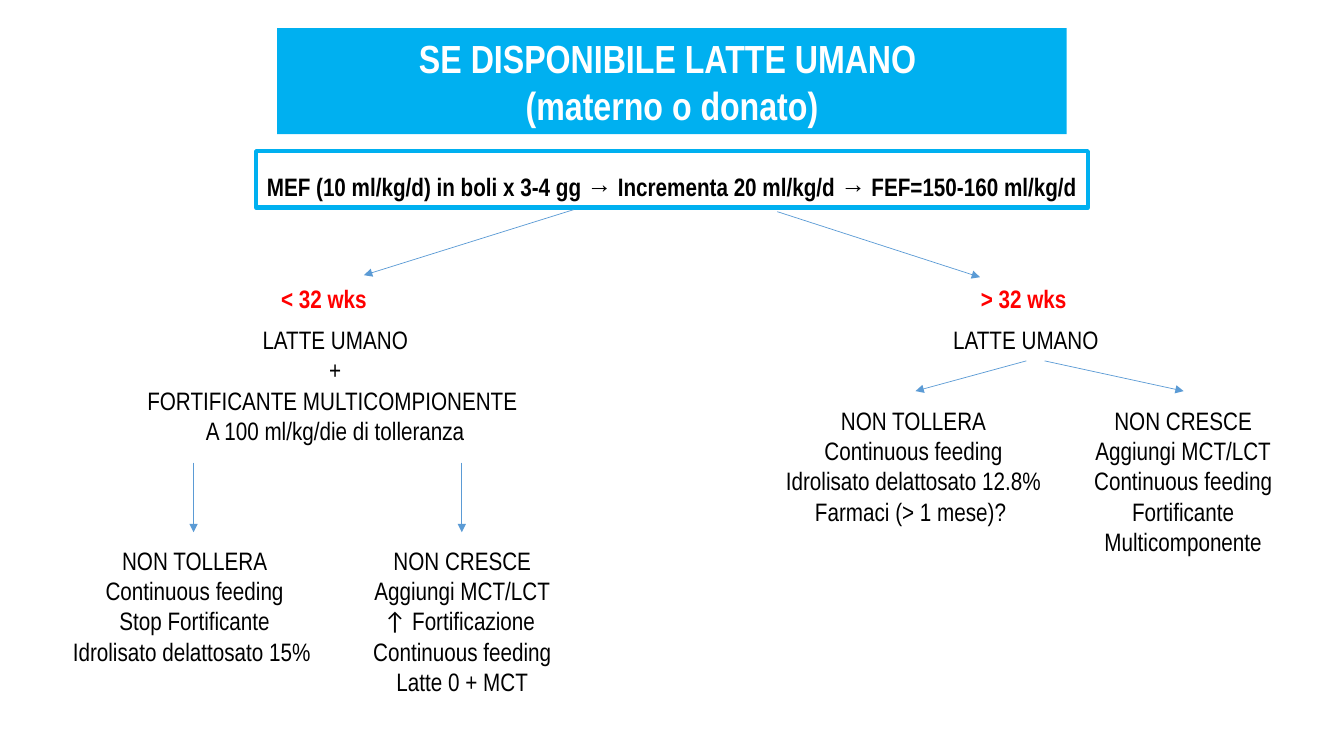
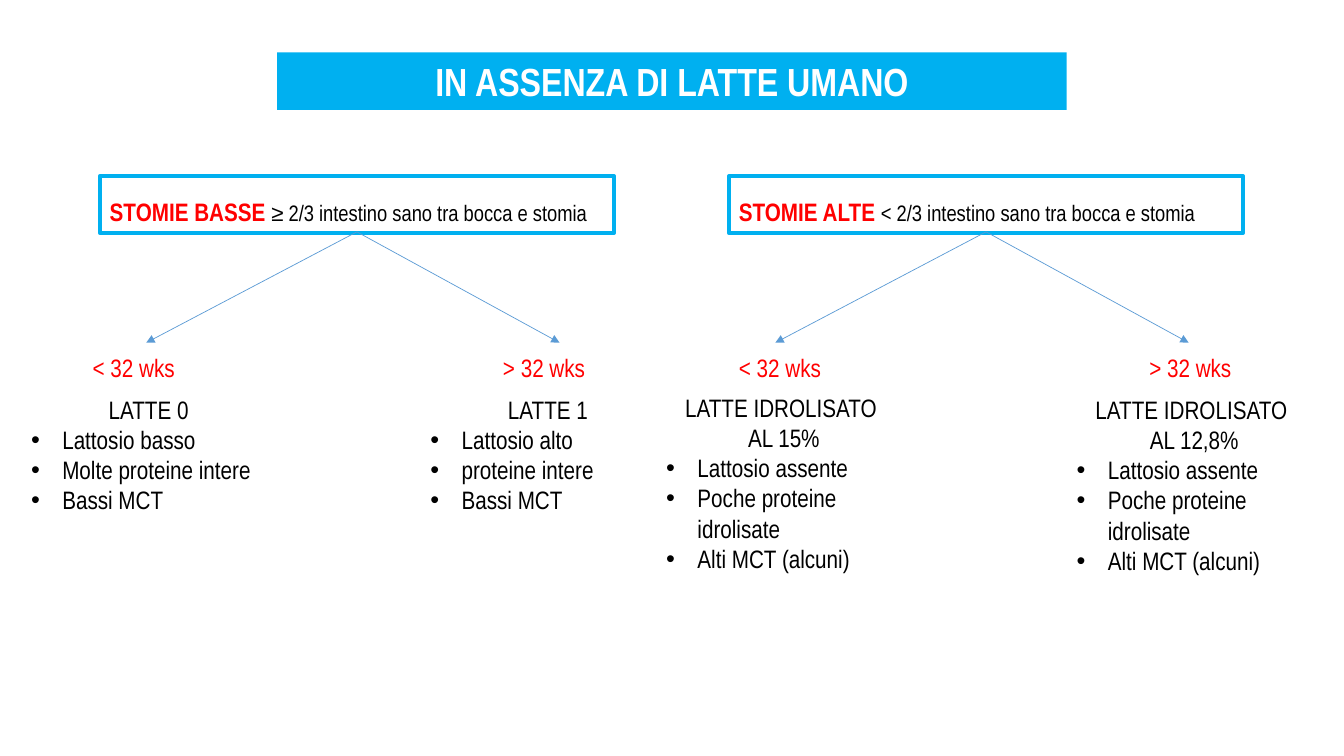
from lxml import etree
from pptx import Presentation
from pptx.dml.color import RGBColor
from pptx.enum.shapes import MSO_CONNECTOR, MSO_SHAPE
from pptx.enum.text import MSO_ANCHOR, PP_ALIGN
from pptx.oxml.ns import qn
from pptx.util import Pt

PX = 9144
RECT, LINE = MSO_SHAPE.RECTANGLE, MSO_CONNECTOR.STRAIGHT
TOP, MID = MSO_ANCHOR.TOP, MSO_ANCHOR.MIDDLE
LEFT, MIDDLE = PP_ALIGN.LEFT, PP_ALIGN.CENTER
FONT, SIGN = "Arial Narrow", "Calibri"
SKY, WIRE, RED = "00B0F0", "5B9BD5", "FF0000"
BLACK, WHITE = "000000", "FFFFFF"
HANG = 31


def px(*nums):
    """Turn px lengths into EMU."""
    return [num * PX for num in nums]


def color(code):
    """Turn a hex string into a colour."""
    return RGBColor.from_string(code)


def run(text, tint=BLACK, size=18, bold=False, face=FONT):
    """Describe one run of text."""
    return text, tint, size, bold, face


def para(frame, runs, align=MIDDLE, space=None, bullet=False):
    """Add a paragraph, reusing the first one while it is empty."""
    first = frame.paragraphs[0]
    item = frame.add_paragraph() if first.runs else first
    if bullet:
        props = item._p.get_or_add_pPr()
        props.set("marL", str(HANG * PX))
        props.set("indent", str(-HANG * PX))
        etree.SubElement(props, qn("a:buFont")).set("typeface", "Arial")
        etree.SubElement(props, qn("a:buChar")).set("char", "•")
    item.alignment = align
    if space:
        item.line_spacing = space
    for text, tint, size, bold, face in runs:
        part = item.add_run()
        part.text = text
        part.font.name = face
        part.font.size = Pt(size)
        part.font.bold = bold
        part.font.color.rgb = color(tint)


def area(slide, box):
    """Add a wrapping text box and return its frame."""
    frame = slide.shapes.add_textbox(*px(*box)).text_frame
    frame.word_wrap = True
    return frame


def block(slide, box, anchor):
    """Add a plain rectangle without shadow."""
    shape = slide.shapes.add_shape(RECT, *px(*box))
    shape.shadow.inherit = False
    shape.text_frame.word_wrap = True
    shape.text_frame.vertical_anchor = anchor
    return shape


def banner(slide, y, h, lines):
    """Add the blue title band."""
    shape = block(slide, (275, y, 783, h), MID)
    shape.fill.solid()
    shape.fill.fore_color.rgb = color(SKY)
    shape.line.fill.background()
    for line in lines:
        para(shape.text_frame, [run(line, WHITE, 28, True)])


def panel(slide, box, runs, align):
    """Add a blue outlined box with one line of text."""
    shape = block(slide, box, TOP)
    shape.fill.background()
    shape.line.color.rgb = color(SKY)
    shape.line.width = Pt(3)
    para(shape.text_frame, runs, align, 1.5)


def arrow(slide, start, end):
    """Add a thin arrow between two points."""
    link = slide.shapes.add_connector(LINE, *px(*start, *end))
    link.line.color.rgb = color(WIRE)
    link.line.width = Pt(0.5)
    props = link._element.spPr
    etree.SubElement(link.line._get_or_add_ln(), qn("a:tailEnd")).set("type", "triangle")
    etree.SubElement(props, qn("a:effectLst"))


def note(slide, box, lines, items=()):
    """Add centred lines followed by bulleted items."""
    frame = area(slide, box)
    for line in lines:
        para(frame, [run(line)] if isinstance(line, str) else line)
    for item in items:
        para(frame, [run(item)], LEFT, bullet=True)


def branch(slide, x, y, age, card, lines, items=(), bold=False):
    """Add a red age label and the note below it, card being dx, dy, w, h."""
    para(area(slide, (x, y, 109, 50)), [run(age, RED, bold=bold)], LEFT, 1.5)
    dx, dy, w, h = card
    note(slide, (x + dx, y + dy, w, h), lines, items)


def human(slide):
    """Build the slide on feeding with human milk."""
    banner(slide, 28, 105, ["SE DISPONIBILE LATTE UMANO ", "(materno o donato)"])
    text = "MEF (10 ml/kg/d) in boli x 3-4 gg → Incrementa 20 ml/kg/d → FEF=150-160 ml/kg/d"
    panel(slide, (254, 150, 825, 56), [run(text, bold=True)], MIDDLE)
    branch(slide, 269, 261, "< 32 wks", (-212, 56, 551, 131),
           ["LATTE UMANO", "+", "FORTIFICANTE MULTICOMPIONENTE ",
            "A 100 ml/kg/die di tolleranza"], bold=True)
    branch(slide, 963, 261, "> 32 wks", (-72, 56, 253, 40), ["LATTE UMANO"], bold=True)
    for start, end in (
        ((569, 208), (361, 273)), ((771, 210), (972, 275)),
        ((192, 459), (192, 528)), ((458, 459), (458, 528)),
        ((1018, 358), (908, 388)), ((1036, 358), (1174, 388)),
    ):
        arrow(slide, start, end)
    fails, grows, feed = "NON TOLLERA", "NON CRESCE", "Continuous feeding"
    oil = "Aggiungi MCT/LCT"
    note(slide, (62, 536, 262, 131),
         [fails, feed, "Stop Fortificante", "Idrolisato delattosato 15% "])
    note(slide, (332, 536, 253, 162),
         [grows, oil, [run("↑ ", face=SIGN), run("Fortificazione ")], feed, "Latte 0 + MCT"])
    note(slide, (767, 397, 278, 131),
         [fails, feed, "Idrolisato delattosato 12.8%", "Farmaci (> 1 mese)? "])
    note(slide, (1047, 397, 253, 161), [grows, oil, feed, "Fortificante Multicomponente"])


def stoma(slide, x, name, rule, shift, cards):
    """Build one half: a panel forking into two age branches."""
    panel(slide, (x, 175, 510, 56),
          [run(name, RED, bold=True), run(rule + " 2/3 intestino sano tra bocca e stomia", size=16)],
          LEFT)
    for tip in (46, 456):
        arrow(slide, (x + 255, 230), (x + tip, 340))
    for step, age, (dx, dy, h, lines, items) in zip((0, 407), ("< 32 wks", "> 32 wks"), cards):
        branch(slide, x + shift + step, 330, age, (dx, dy, 253, h), lines, items)


def formula(slide):
    """Build the slide on feeding without human milk."""
    banner(slide, 52, 57, ["IN ASSENZA DI LATTE UMANO"])
    stoma(slide, 99, "STOMIE BASSE ", "≥", -17, [
        (-61, 56, 131, ["LATTE 0"], ["Lattosio basso", "Molte proteine intere", "Bassi MCT"]),
        (-72, 56, 131, ["LATTE 1"], ["Lattosio alto", "proteine intere", "Bassi MCT"]),
    ])
    head = "LATTE IDROLISATO "
    items = ["Lattosio assente", "Poche proteine idrolisate", "Alti MCT (alcuni)"]
    stoma(slide, 723, "STOMIE ALTE ", "<", 0, [
        (-72, 54, 192, [head, "AL 15%"], items),
        (-72, 56, 192, [head, "AL 12,8%"], items),
    ])


def main():
    """Build and save the deck."""
    deck = Presentation()
    deck.slide_width, deck.slide_height = px(1333, 750)
    for build in (human, formula):
        build(deck.slides.add_slide(deck.slide_layouts[6]))
    deck.save("out.pptx")


if __name__ == "__main__":
    main()
